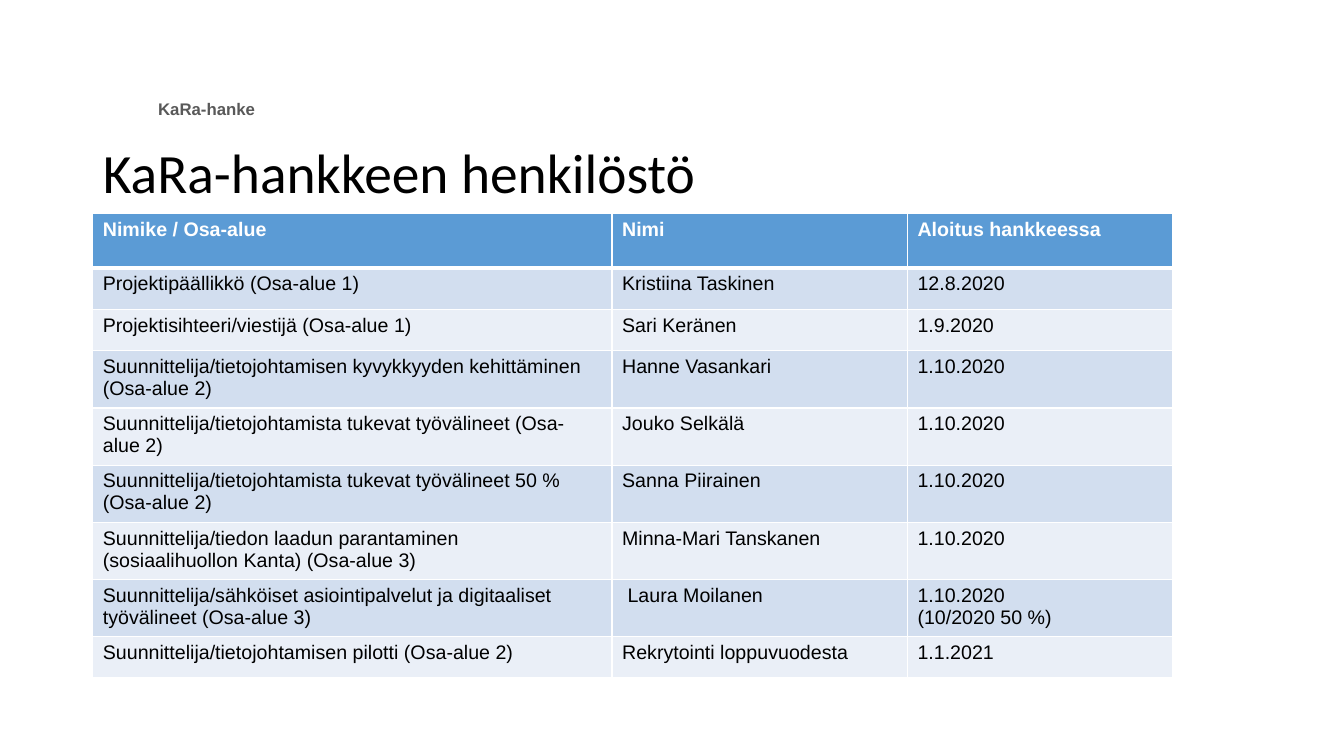
import pptx
import pptx.util
import pptx.dml.color
import pptx.enum.text
import pptx.oxml
import pptx.oxml.ns

Inches, Pt = pptx.util.Inches, pptx.util.Pt

COLORS = {
    "label": "595959",
    "text": "000000",
    "white": "FFFFFF",
    "header": "5B9BD5",
    "band_dark": "D2DEEF",
    "band_light": "EAEFF7",
}
COL_WIDTHS = [5.15, 2.93, 2.63]
ROW_HEIGHT, TALL_ROW_HEIGHT = 0.41, 0.54
TALL_ROWS = {0, 3, 4, 5, 6, 7}
STAFF = [
    ("Nimike / Osa-alue", "Nimi", "Aloitus hankkeessa"),
    ("Projektipäällikkö (Osa-alue 1)", "Kristiina Taskinen", "12.8.2020"),
    ("Projektisihteeri/viestijä (Osa-alue 1)", "Sari Keränen", "1.9.2020"),
    ("Suunnittelija/tietojohtamisen kyvykkyyden kehittäminen (Osa-alue 2)",
     "Hanne Vasankari", "1.10.2020"),
    ("Suunnittelija/tietojohtamista tukevat työvälineet (Osa-alue 2)",
     "Jouko Selkälä", "1.10.2020"),
    ("Suunnittelija/tietojohtamista tukevat työvälineet 50 % (Osa-alue 2)",
     "Sanna Piirainen", "1.10.2020"),
    ("Suunnittelija/tiedon laadun parantaminen\n(sosiaalihuollon Kanta) (Osa-alue 3)",
     "Minna-Mari Tanskanen", "1.10.2020"),
    ("Suunnittelija/sähköiset asiointipalvelut ja digitaaliset työvälineet (Osa-alue 3)",
     " Laura Moilanen", "1.10.2020\n(10/2020 50 %)"),
    ("Suunnittelija/tietojohtamisen pilotti (Osa-alue 2)",
     "Rekrytointi loppuvuodesta", "1.1.2021"),
]


def rgb(name):
    return pptx.dml.color.RGBColor.from_string(COLORS[name])


def add_run(p, text, size, color, font="Arial", bold=False):
    r = p.add_run()
    r.text = text
    r.font.name, r.font.size, r.font.bold = font, Pt(size), bold
    r.font.color.rgb = rgb(color)


def set_borders(cell, bottom=1, top=1):
    """Draw white cell borders; the widths are in points."""
    tcPr = cell._tc.get_or_add_tcPr()
    widths = {"lnL": 1, "lnR": 1, "lnT": top, "lnB": bottom}
    for i, (tag, width) in enumerate(widths.items()):
        tcPr.insert(i, pptx.oxml.parse_xml(
            f'<a:{tag} {pptx.oxml.ns.nsdecls("a")} w="{Pt(width)}"><a:solidFill>'
            f'<a:srgbClr val="{COLORS["white"]}"/></a:solidFill></a:{tag}>'))


def add_label(slide, left, top, width, height):
    sp = slide.shapes.add_textbox(Inches(left), Inches(top), Inches(width), Inches(height))
    tf = sp.text_frame
    tf.word_wrap = True
    add_run(tf.paragraphs[0], "KaRa-hanke", 12, "label", bold=True)


def add_title(slide, left, top, width, height):
    sp = slide.shapes.title
    sp.left, sp.top = Inches(left), Inches(top)
    sp.width, sp.height = Inches(width), Inches(height)
    tf = sp.text_frame
    tf.word_wrap = True
    tf.auto_size = pptx.enum.text.MSO_AUTO_SIZE.NONE
    tf.vertical_anchor = pptx.enum.text.MSO_ANCHOR.MIDDLE
    p = tf.paragraphs[0]
    p.alignment = pptx.enum.text.PP_ALIGN.LEFT
    p.line_spacing = 0.9
    add_run(p, "KaRa-hankkeen henkilöstö", 39.6, "text", font="Calibri")


def add_staff_table(slide, left, top):
    heights = [TALL_ROW_HEIGHT if i in TALL_ROWS else ROW_HEIGHT for i in range(len(STAFF))]
    table = slide.shapes.add_table(
        len(STAFF), len(COL_WIDTHS), Inches(left), Inches(top),
        Inches(sum(COL_WIDTHS)), Inches(sum(heights))).table
    for column, width in zip(table.columns, COL_WIDTHS):
        column.width = Inches(width)
    for i, (row, height, texts) in enumerate(zip(table.rows, heights, STAFF)):
        row.height = Inches(height)
        header = i == 0
        fill = "header" if header else "band_dark" if i % 2 else "band_light"
        for cell, text in zip(row.cells, texts):
            cell.fill.solid()
            cell.fill.fore_color.rgb = rgb(fill)
            set_borders(cell, bottom=3 if header else 1, top=3 if i == 1 else 1)
            tf = cell.text_frame
            for n, line in enumerate(text.split("\n")):
                p = tf.add_paragraph() if n else tf.paragraphs[0]
                add_run(p, line, 14, "white" if header else "text", bold=header)


def main():
    prs = pptx.Presentation()
    prs.slide_width, prs.slide_height = Inches(13.33), Inches(7.5)
    slide = prs.slides.add_slide(prs.slide_layouts[5])
    add_label(slide, 1.47, 0.93, 1.4, 0.3)
    add_title(slide, 0.92, 1.37, 11.5, 0.75)
    add_staff_table(slide, 0.92, 2.12)
    prs.save("out.pptx")


if __name__ == "__main__":
    main()
